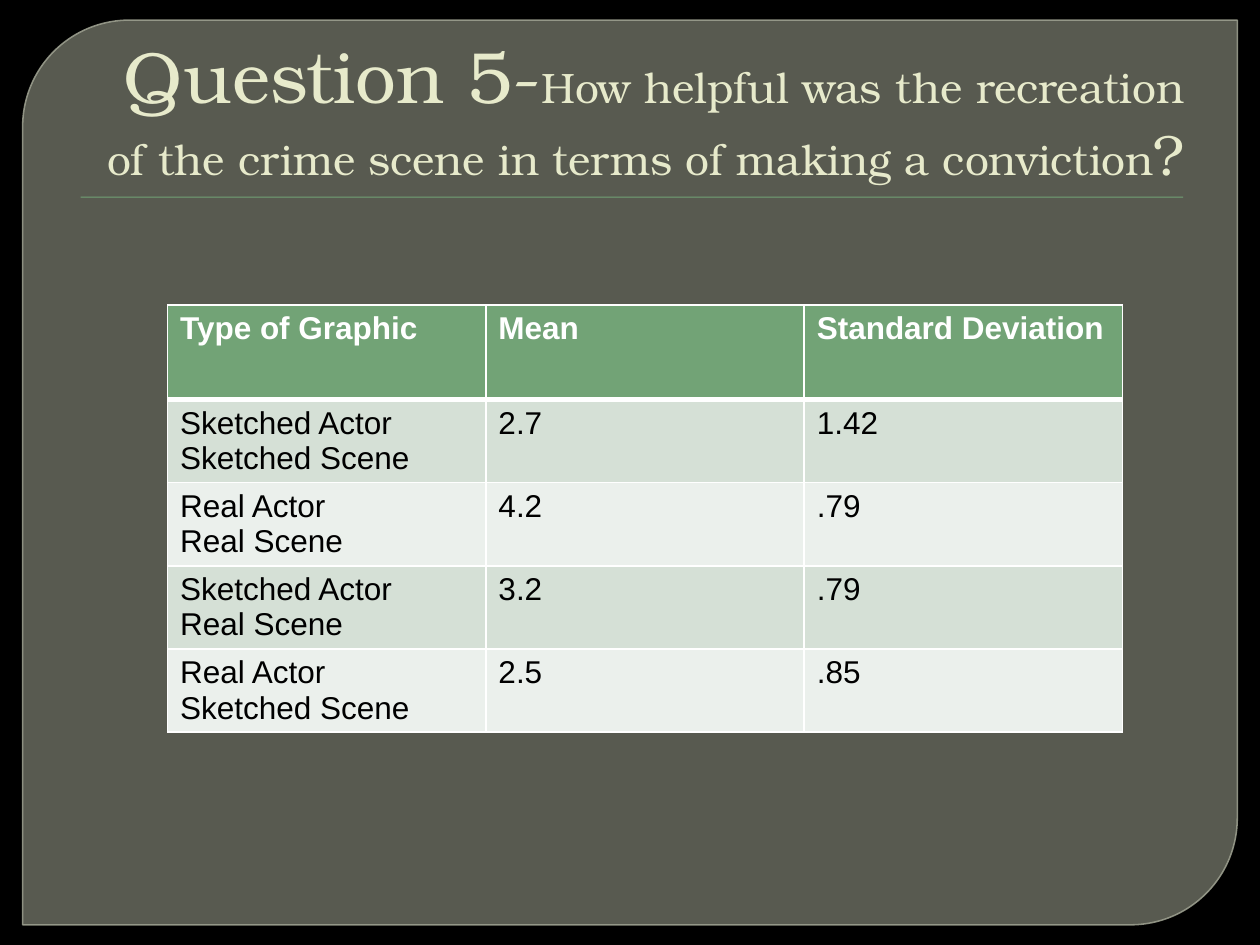
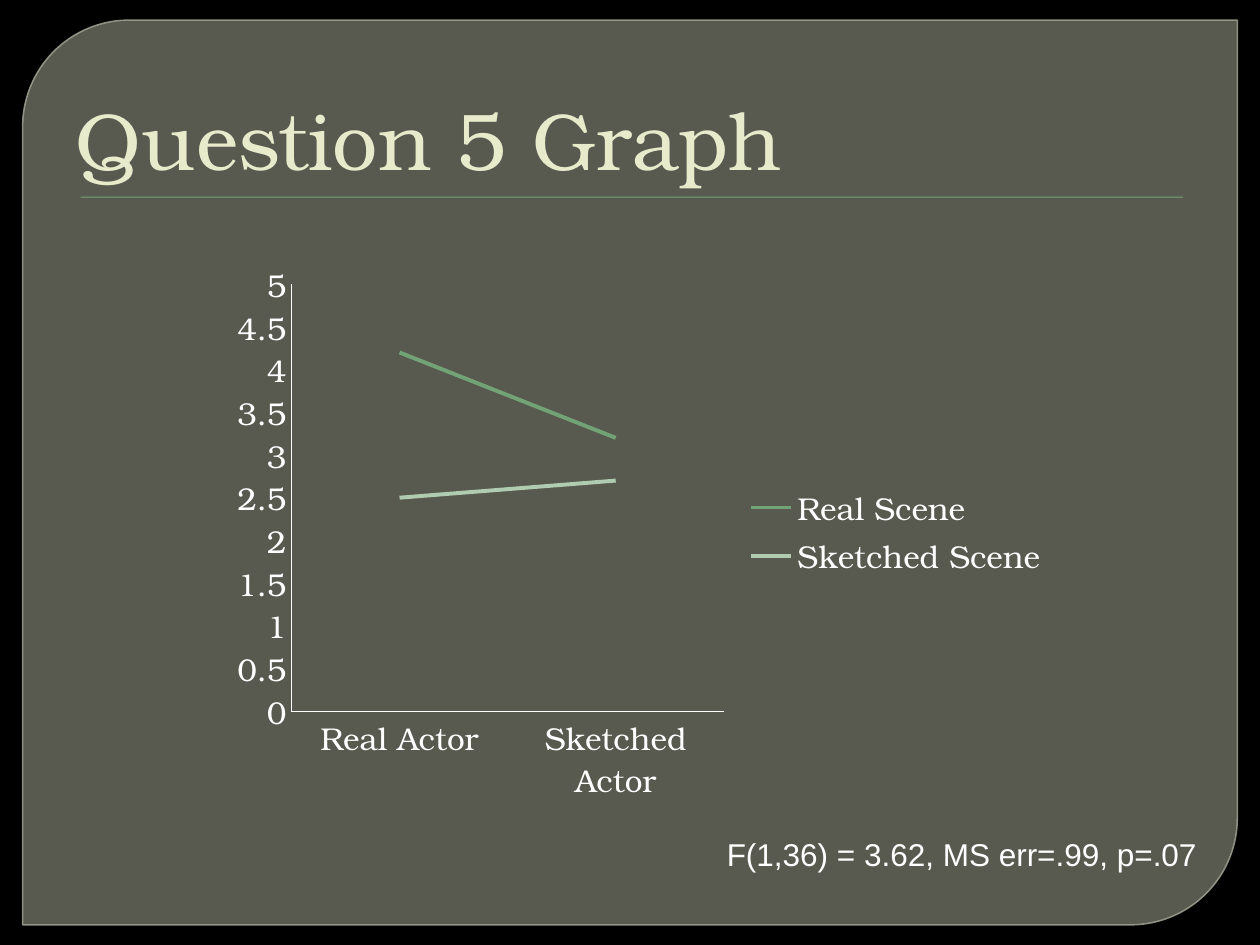
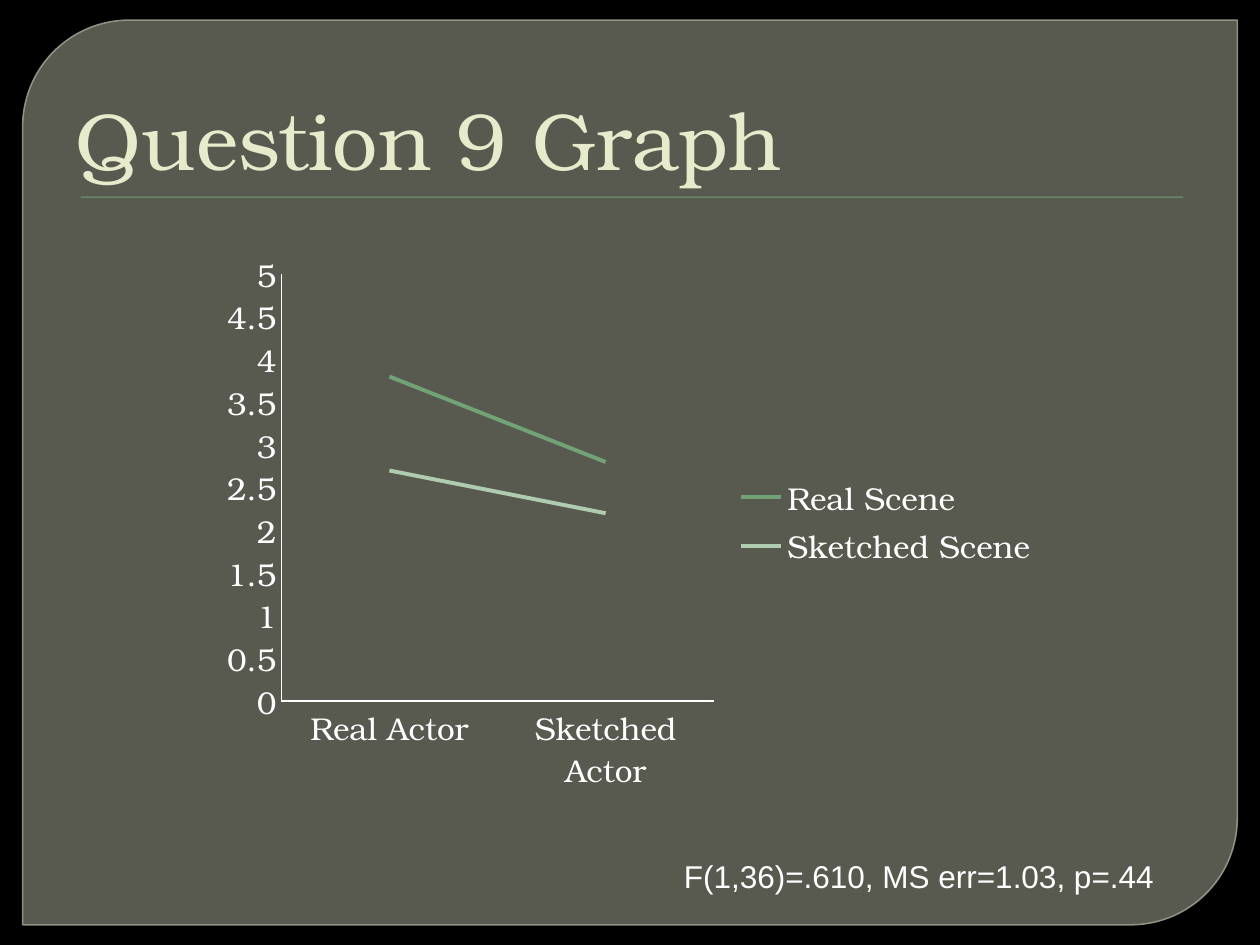
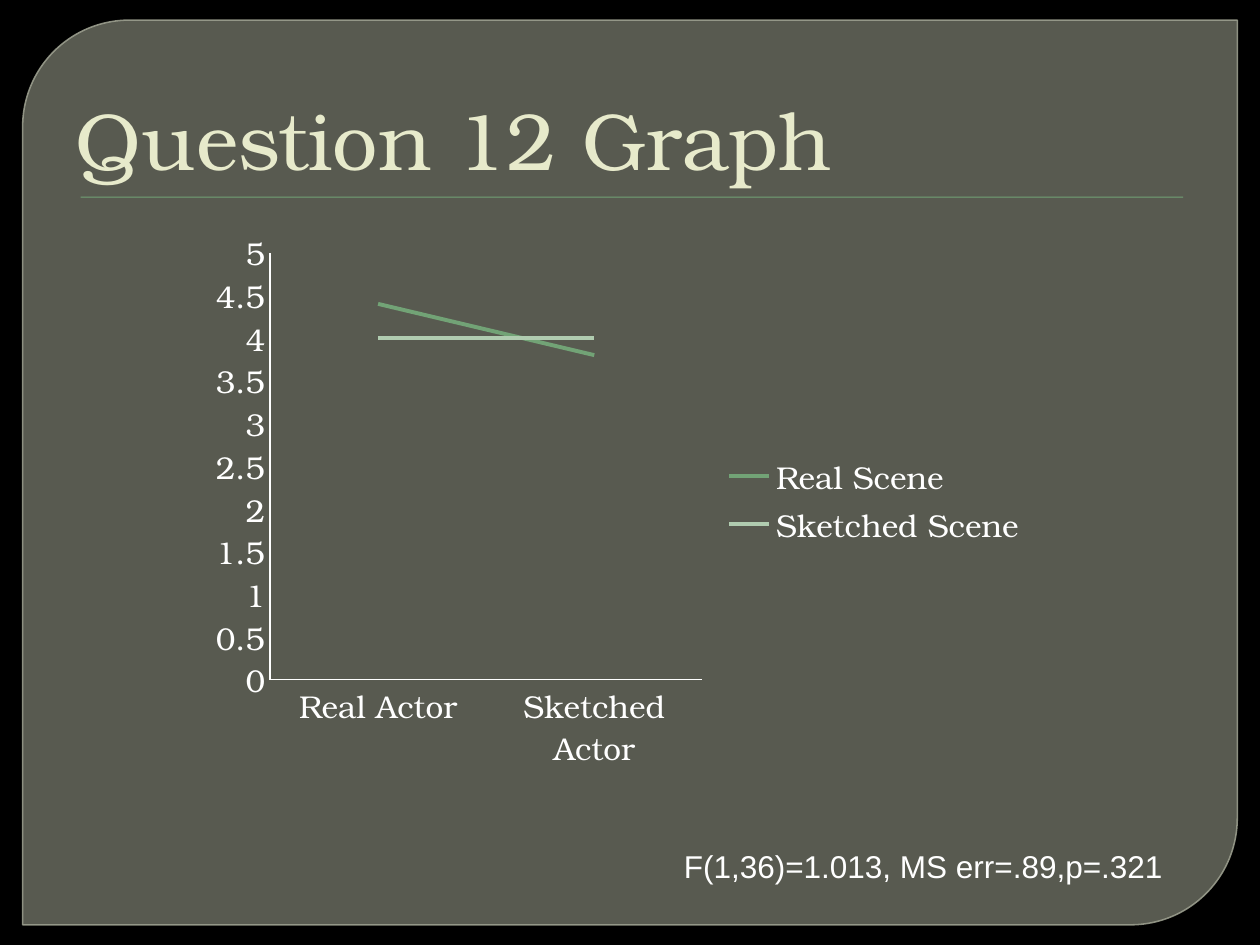
from lxml import etree
from pptx import Presentation
from pptx import util as u
from pptx.chart.data import CategoryChartData
from pptx.dml.color import RGBColor
from pptx.enum import chart as ch, shapes, text
from pptx.oxml.ns import qn

SERIF, SANS = "TeX Gyre Bonum", "Arial"
GREEN, PALE, CREAM, WHITE, BLACK = "72A376", "B0CCB0", "E7EACB", "FFFFFF", "000000"
PANEL, EDGE = "888B7B", "9DA090"
BANDS = "D5E0D6", "EBF0EC"
HEAD = "Type of Graphic", "Mean", "Standard Deviation"
ROWS = [
    ("Sketched Actor\nSketched Scene", "2.7", "1.42"),
    ("Real Actor\nReal Scene", "4.2", ".79"),
    ("Sketched Actor\nReal Scene", "3.2", ".79"),
    ("Real Actor\nSketched Scene", "2.5", ".85"),
]
CATS = "Real Actor", "Sketched Actor"
GRAPHS = [
    {"name": "Question 5 Graph", "box": (1.75, 2, 6.67, 4.44),
     "real": (4.2, 3.2), "sketch": (2.5, 2.7),
     "note": "F(1,36) = 3.62, MS err=.99, p=.07", "spot": (5.67, 6.58, 3.97, 0.4)},
    {"name": "Question 9 Graph", "box": (1.67, 1.92, 6.67, 4.44),
     "real": (3.8, 2.8), "sketch": (2.7, 2.2),
     "note": "F(1,36)=.610, MS err=1.03, p=.44", "spot": (5.33, 6.75, 3.97, 0.4)},
    {"name": "Question 12 Graph", "box": (1.58, 1.75, 6.67, 4.44),
     "real": (4.4, 3.8), "sketch": (4, 4),
     "note": "F(1,36)=1.013, MS err=.89,p=.321", "spot": (5.33, 6.67, 4.04, 0.4)},
]


def put(obj, **vals):
    """Set each named value on an object."""
    for key, val in vals.items():
        setattr(obj, key, val)


def inch(box):
    """Turn a box of numbers into inch lengths."""
    return [u.Inches(n) for n in box]


def paint(fill, tone):
    """Make a fill solid in a hex colour."""
    fill.solid()
    fill.fore_color.rgb = RGBColor.from_string(tone)


def style(font, size, tone, name=SERIF, bold=False):
    """Format a font."""
    put(font, size=u.Pt(size), name=name, bold=bold)
    paint(font.fill, tone)


def node(parent, tag, **vals):
    """Append an XML child with attributes."""
    return etree.SubElement(parent, qn(tag), {k: str(v) for k, v in vals.items()})


def stroke(line, tone, width):
    """Give a line its colour and width."""
    paint(line.fill, tone)
    line.width = u.Pt(width)


def frame(slide, layout):
    """Build the panel and title rule, and place them on the layout."""
    paint(layout.background.fill, BLACK)
    panel = slide.shapes.add_shape(
        shapes.MSO_SHAPE.ROUND_2_DIAG_RECTANGLE, *inch((0.18, 0.16, 9.64, 7.18)))
    panel.adjustments[0], panel.adjustments[1] = 0.118, 0
    paint(panel.fill, PANEL)
    stroke(panel.line, EDGE, 0.87)
    for tint, part in zip(panel.element.iter(qn("a:srgbClr")), (65, 88)):
        node(tint, "a:alpha", val=part * 1000)
    rule = slide.shapes.add_shape(
        shapes.MSO_SHAPE.RECTANGLE, *inch((0.64, 1.56, 8.75, 0.01)))
    paint(rule.fill, GREEN)
    rule.line.fill.background()
    for spot, shape in enumerate((panel, rule), 2):
        shape.shadow.inherit = False
        layout.shapes.element.insert(spot, shape.element)
    glow = node(rule.element.spPr.find(qn("a:effectLst")), "a:outerShdw",
                blurRad=u.Pt(1), dist=u.Pt(1), dir=90 * 60000)
    node(node(glow, "a:srgbClr", val=BLACK), "a:alpha", val=75000)


def title(slide, runs, align=text.PP_ALIGN.LEFT):
    """Place the title and fill it with sized runs."""
    shape = slide.shapes.title
    left, top, width, height = inch((0.5, 0.28, 9, 1.25))
    put(shape, left=left, top=top, width=width, height=height)
    put(shape.text_frame, word_wrap=True, auto_size=text.MSO_AUTO_SIZE.NONE,
        vertical_anchor=text.MSO_ANCHOR.BOTTOM)
    para = shape.text_frame.paragraphs[0]
    para.alignment = align
    props = para._p.get_or_add_pPr()
    props.set("marL", str(u.Inches(0.06)))
    props.set("indent", str(-u.Inches(0.06)))
    for words, size in runs:
        run = para.add_run()
        run.text = words
        style(run.font, size, CREAM)


def border(cell, head):
    """Draw white lines round a cell, heavy under the header."""
    props = cell._tc.get_or_add_tcPr()
    for spot, side in enumerate("LRTB"):
        width = 3 if head and side == "B" else 1
        line = node(props, f"a:ln{side}", w=u.Pt(width))
        node(node(line, "a:solidFill"), "a:srgbClr", val=WHITE)
        props.insert(spot, line)


def grid(slide, box):
    """Add the table of means and deviations."""
    rows = [HEAD, *ROWS]
    table = slide.shapes.add_table(len(rows), len(HEAD), *inch(box)).table
    for col in table.columns:
        col.width = u.Inches(box[2] / len(HEAD))
    for i, (row, vals) in enumerate(zip(table.rows, rows)):
        head = i == 0
        row.height = u.Inches(0.75 if head else 0.66)
        for cell, val in zip(row.cells, vals):
            cell.text = val
            paint(cell.fill, GREEN if head else BANDS[(i - 1) % 2])
            border(cell, head)
            for para in cell.text_frame.paragraphs:
                style(para.runs[0].font, 18, WHITE if head else BLACK, SANS, head)


def graph(slide, box, real, sketch):
    """Add the line chart of both scenes."""
    data = CategoryChartData()
    data.categories = CATS
    data.add_series("Real Scene", real)
    data.add_series("Sketched Scene", sketch)
    chart = slide.shapes.add_chart(ch.XL_CHART_TYPE.LINE, *inch(box), data).chart
    style(chart.font, 18, WHITE)
    put(chart, has_title=False, has_legend=True)
    put(chart.legend, position=ch.XL_LEGEND_POSITION.RIGHT, include_in_layout=False)
    chart.plots[0].vary_by_categories = False
    for axis in (chart.category_axis, chart.value_axis):
        put(axis, has_major_gridlines=False, major_tick_mark=ch.XL_TICK_MARK.NONE,
            minor_tick_mark=ch.XL_TICK_MARK.NONE)
        stroke(axis.format.line, WHITE, 0.75)
    put(chart.value_axis, minimum_scale=0, maximum_scale=5, major_unit=0.5)
    for line, tone in zip(chart.plots[0].series, (GREEN, PALE)):
        line.smooth = False
        line.marker.style = ch.XL_MARKER_STYLE.NONE
        stroke(line.format.line, tone, 2.25)


def note(slide, box, words):
    """Add the test result under the chart."""
    body = slide.shapes.add_textbox(*inch(box)).text_frame
    put(body, text=words, word_wrap=False,
        auto_size=text.MSO_AUTO_SIZE.SHAPE_TO_FIT_TEXT)
    style(body.paragraphs[0].runs[0].font, 18, WHITE, SANS)


def main():
    """Build the table slide and the graph slides."""
    deck = Presentation()
    put(deck, slide_width=u.Inches(10), slide_height=u.Inches(7.5))
    layout = deck.slide_layouts[5]
    slide = deck.slides.add_slide(layout)
    frame(slide, layout)
    title(slide, [
        ("Question 5-", 41.4),
        ("How helpful was the recreation of the crime scene "
         "in terms of making a conviction", 24.3),
        ("?", 32.4)], text.PP_ALIGN.RIGHT)
    grid(slide, (1.33, 2.42, 7.58, 3.39))
    for item in GRAPHS:
        slide = deck.slides.add_slide(layout)
        title(slide, [(item["name"], 46)])
        graph(slide, item["box"], item["real"], item["sketch"])
        note(slide, item["spot"], item["note"])
    deck.save("out.pptx")


if __name__ == "__main__":
    main()
